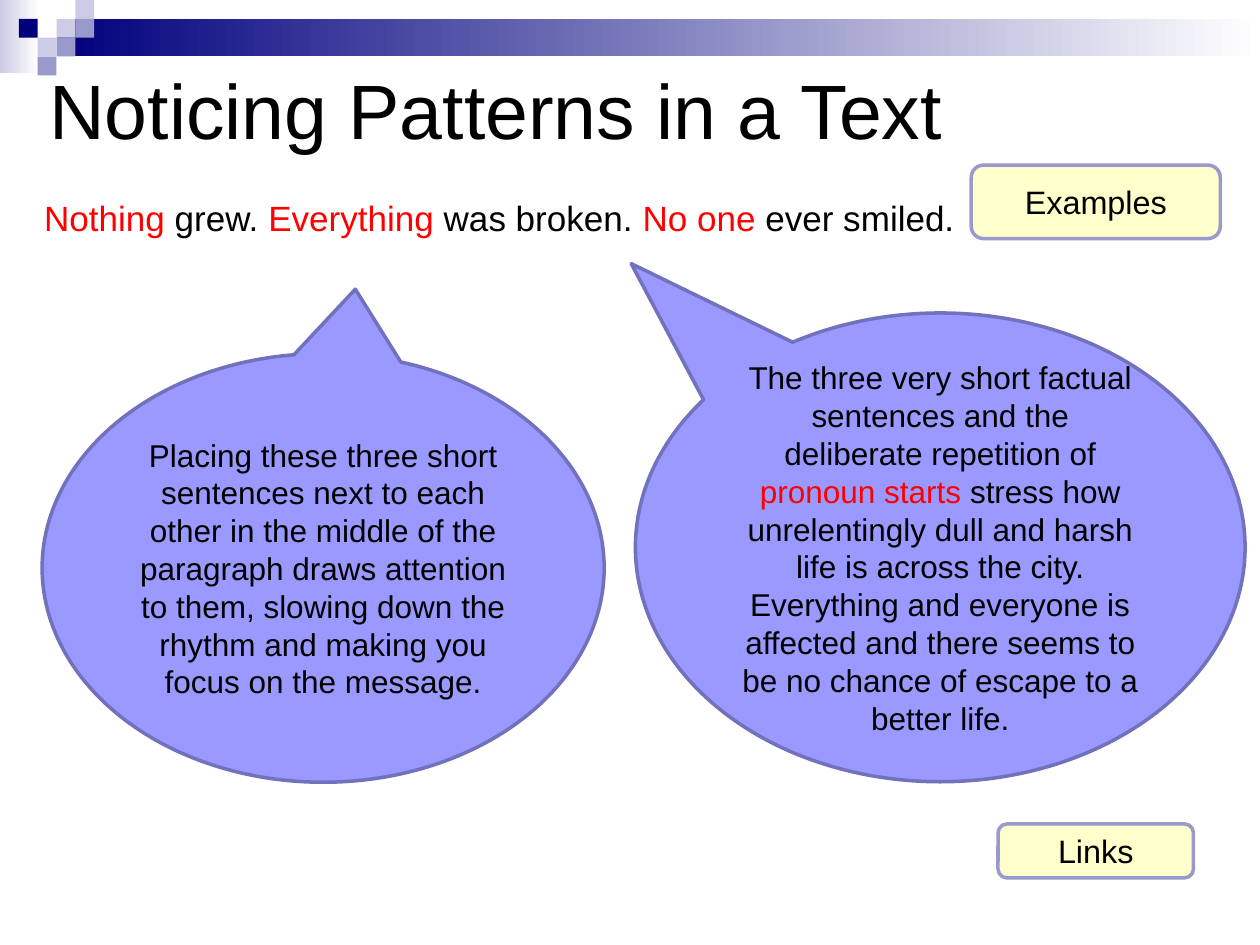
from pptx import Presentation
from pptx import util as u
from pptx.dml.color import RGBColor
from pptx.enum import shapes, text

# Theme
THEME = {
    "font": "Arial",
    "ink": "000000", "red": "FF0000", "white": "FFFFFF",
    "navy": "00007D", "mid": "9999CC", "light": "CCCCE6",
    "button": "FFFFCC", "bubble": "9999FF", "bubble_line": "7171BD",
    "title_pt": 44, "quote_pt": 20, "bubble_pt": 18, "button_pt": 18.5,
    "line_pt": 2,
}

# Content: runs are (wording, colour)
TITLE = "Noticing Patterns in a Text"
QUOTE = [
    ("Nothing", "red"), (" grew. ", "ink"),
    ("Everything", "red"), (" was broken. ", "ink"),
    ("No one ", "red"), ("ever smiled.", "ink"),
]
BUTTONS = [
    ("Examples", (19.58, 3.33, 5.02, 1.48)),
    ("Links", (20.12, 16.61, 3.94, 1.09)),
]
# Callouts: runs, box, pointer tip measured from the centre
CALLOUTS = [
    ([("The three very short factual sentences and the deliberate "
       "repetition of ", "ink"),
      ("pronoun starts ", "red"),
      ("stress how unrelentingly dull and harsh life is across the city. "
       "Everything and everyone is affected and there seems to be no chance "
       "of escape to a better life.", "ink")],
     (12.81, 6.31, 12.29, 9.45), (-6.23, -5.72)),
    ([("Placing these three short sentences next to each other in the middle "
       "of the paragraph draws attention to them, slowing down the rhythm and "
       "making you focus on the message.", "ink")],
     (0.85, 7.13, 11.33, 8.64), (0.65, -5.62)),
]
CALLOUT_INSET = 0.3

# Header decoration: fading bars, and squares by (column, row) on a grid
UNIT = 0.38
WIDTH, HEIGHT = 25.4, 19.05
BARS = [
    ("light", (0, 0, 0.79, 1.47)),
    ("navy", (3 * UNIT, UNIT, WIDTH - 3 * UNIT, 2 * UNIT)),
]
SQUARES = {
    "light": [(3, 1), (4, 0), (2, 2)],
    "mid": [(4, 1), (3, 2), (2, 3)],
    "navy": [(1, 1)],
}


def colour(name):
    return RGBColor.from_string(THEME[name])


def cm(box):
    return [u.Cm(v) for v in box]


def add_shape(s, kind, box, fill, line=None):
    sp = s.shapes.add_shape(kind, *cm(box))
    sp.shadow.inherit = False
    sp.fill.solid()
    sp.fill.fore_color.rgb = colour(fill)
    if line:
        sp.line.color.rgb = colour(line)
        sp.line.width = u.Pt(THEME["line_pt"])
    else:
        sp.line.fill.background()
    return sp


def add_bar(s, box, start):
    sp = add_shape(s, shapes.MSO_SHAPE.RECTANGLE, box, start)
    sp.fill.gradient()
    sp.fill.gradient_angle = 0
    for stop, name, position in zip(sp.fill.gradient_stops, (start, "white"), (0, 1)):
        stop.color.rgb = colour(name)
        stop.position = position


def write(sp, runs, size, align, anchor=text.MSO_ANCHOR.MIDDLE):
    tf = sp.text_frame
    tf.word_wrap = True
    tf.auto_size = text.MSO_AUTO_SIZE.NONE
    tf.vertical_anchor = anchor
    p = tf.paragraphs[0]
    p.alignment = align
    for wording, name in runs:
        r = p.add_run()
        r.text = wording
        r.font.name = THEME["font"]
        r.font.size = u.Pt(THEME[size])
        r.font.color.rgb = colour(name)


def main():
    prs = Presentation()
    prs.slide_width, prs.slide_height = cm((WIDTH, HEIGHT))
    s = prs.slides.add_slide(prs.slide_layouts[5])
    left, center = text.PP_ALIGN.LEFT, text.PP_ALIGN.CENTER

    # Header decoration
    for start, box in BARS:
        add_bar(s, box, start)
    for fill, cells in SQUARES.items():
        for col, row in cells:
            box = (col * UNIT, row * UNIT, UNIT, UNIT)
            add_shape(s, shapes.MSO_SHAPE.RECTANGLE, box, fill)

    # Title
    title = s.shapes.title
    title.left, title.top, title.width, title.height = cm((0.74, 0.43, 22.86, 3.51))
    write(title, [(TITLE, "ink")], "title_pt", left)

    # Buttons
    for label, box in BUTTONS:
        sp = add_shape(s, shapes.MSO_SHAPE.ROUNDED_RECTANGLE, box, "button", "mid")
        write(sp, [(label, "ink")], "button_pt", center)

    # Quotation
    quote = s.shapes.add_textbox(*cm((0.64, 3.84, 21.84, 1.12)))
    write(quote, QUOTE, "quote_pt", left, text.MSO_ANCHOR.TOP)

    # Callouts
    for runs, box, (tip_x, tip_y) in CALLOUTS:
        sp = add_shape(s, shapes.MSO_SHAPE.OVAL_CALLOUT, box, "bubble", "bubble_line")
        sp.adjustments[0] = tip_x / box[2]
        sp.adjustments[1] = tip_y / box[3]
        write(sp, runs, "bubble_pt", center)
        tf = sp.text_frame
        tf.margin_left = tf.margin_right = u.Cm(CALLOUT_INSET)

    prs.save("out.pptx")


if __name__ == "__main__":
    main()
